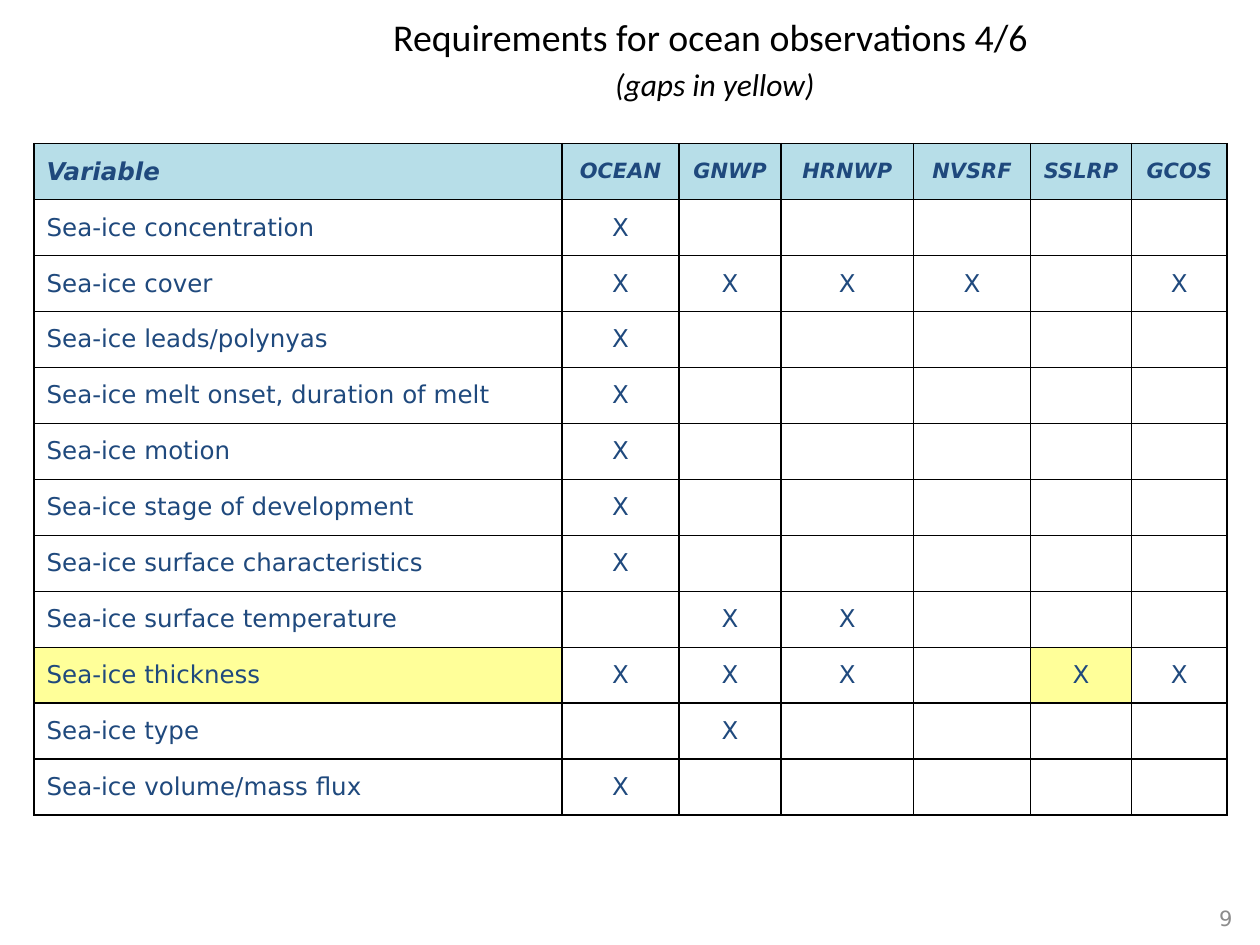
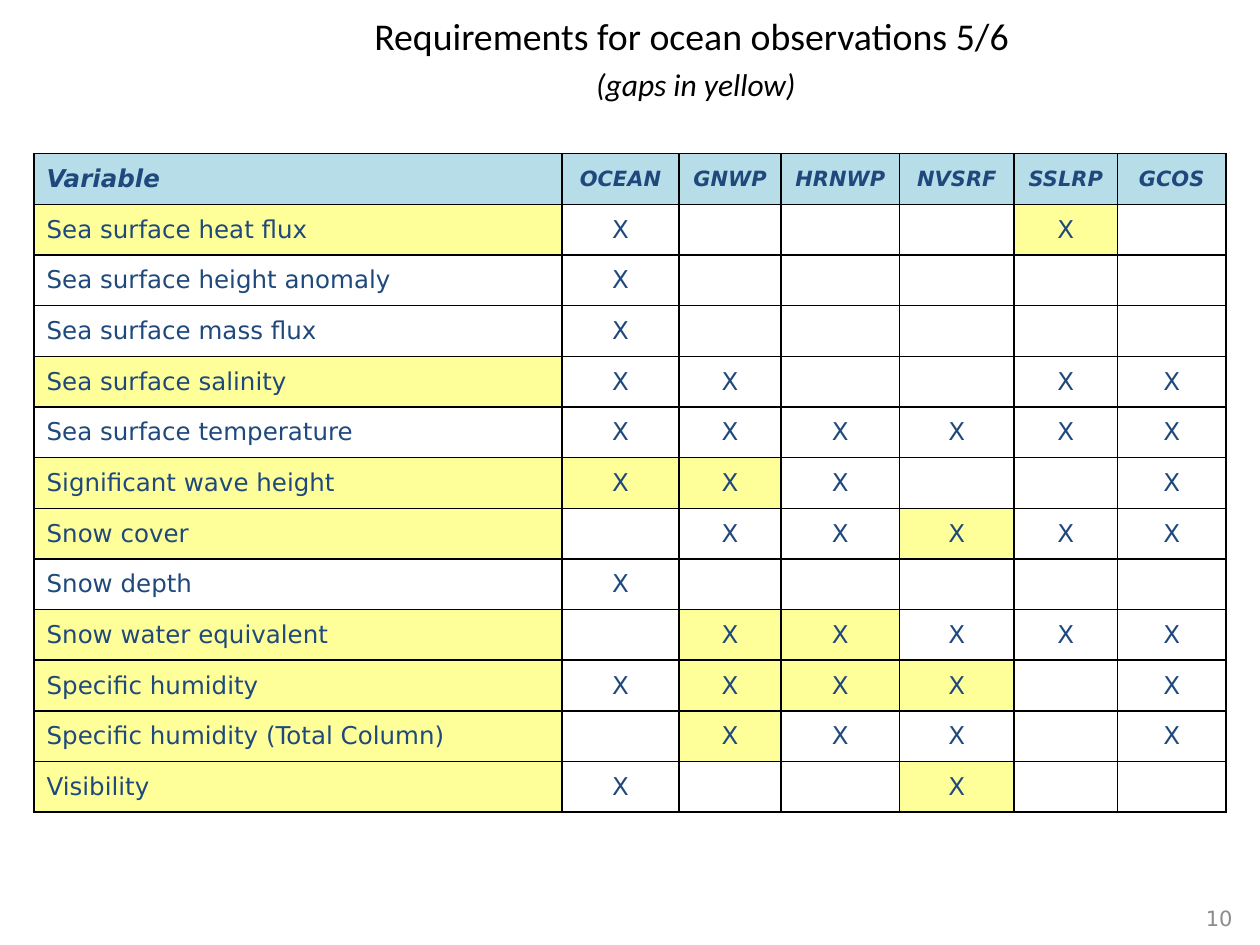
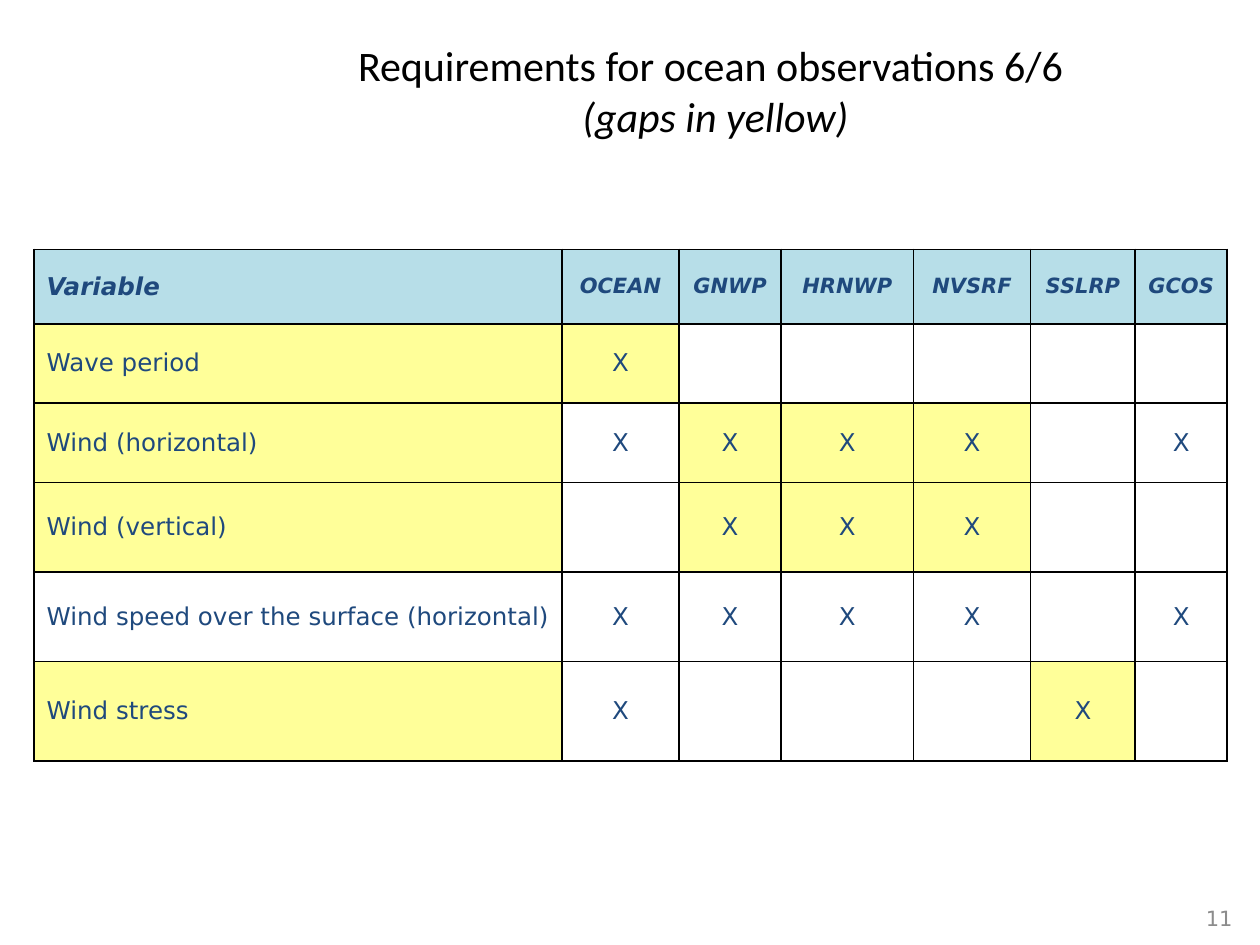
from lxml import etree
from pptx import Presentation
from pptx.dml.color import RGBColor
from pptx.enum.text import MSO_ANCHOR, PP_ALIGN
from pptx.oxml.ns import qn
from pptx.util import Inches, Pt

MIDDLE = MSO_ANCHOR.MIDDLE
LEFT, CENTER, RIGHT = PP_ALIGN.LEFT, PP_ALIGN.CENTER, PP_ALIGN.RIGHT

BLACK = RGBColor(0x00, 0x00, 0x00)
NAVY = RGBColor(0x1F, 0x49, 0x7D)
GRAY = RGBColor(0x8C, 0x8C, 0x8C)
AQUA = RGBColor(0xB7, 0xDE, 0xE8)
YELLOW = RGBColor(0xFF, 0xFF, 0x99)

HEAD_FONT, BODY_FONT = "Calibri", "DejaVu Sans"
HEADS = ["Variable", "OCEAN", "GNWP", "HRNWP", "NVSRF", "SSLRP", "GCOS"]
TABLE_LEFT = 0.27

# Marks: the first sign is for the name, the rest for the six areas.
# "x" is a need, "!" a need with a gap (yellow), "." nothing.
SLIDES = [
    {
        "page": 9, "part": "4/6", "title": (1.53, 0.17, 8.22, 0.59),
        "sizes": (21.6, 18), "top": 1.14,
        "cols": [4.19, 0.93, 0.81, 1.05, 0.93, 0.8, 0.76],
        "heights": [5.33 / 12] * 12,
        "rows": [
            ("Sea-ice concentration", "xx....."),
            ("Sea-ice cover", "xxxxx.x"),
            ("Sea-ice leads/polynyas", "xx....."),
            ("Sea-ice melt onset, duration of melt", "xx....."),
            ("Sea-ice motion", "xx....."),
            ("Sea-ice stage of development", "xx....."),
            ("Sea-ice surface characteristics", "xx....."),
            ("Sea-ice surface temperature", "x.xx..."),
            ("Sea-ice thickness", "!xxx.!x"),
            ("Sea-ice type", "x.x...."),
            ("Sea-ice volume/mass flux", "xx....."),
        ],
    },
    {
        "page": 10, "part": "5/6", "title": (1.38, 0.25, 8.22, 0.43),
        "sizes": (21.6, 18), "top": 1.22,
        "cols": [4.19, 0.93, 0.81, 0.94, 0.91, 0.82, 0.86],
        "heights": [5.23 / 13] * 13,
        "rows": [
            ("Sea surface heat flux", "!x...!."),
            ("Sea surface height anomaly", "xx....."),
            ("Sea surface mass flux", "xx....."),
            ("Sea surface salinity", "!xx..xx"),
            ("Sea surface temperature", "xxxxxxx"),
            ("Significant wave height", "!!!x..x"),
            ("Snow cover", "!.xx!xx"),
            ("Snow depth", "xx....."),
            ("Snow water equivalent", "!.!!xxx"),
            ("Specific humidity", "!x!!!.x"),
            ("Specific humidity (Total Column)", "!.!xx.x"),
            ("Visibility", "!x..!.."),
        ],
    },
    {
        "page": 11, "part": "6/6", "title": (1.53, 0.09, 8.22, 1.25),
        "sizes": (24, 24), "top": 1.98,
        "cols": [4.19, 0.93, 0.81, 1.05, 0.93, 0.83, 0.73],
        "heights": [0.59, 0.63, 0.63, 0.71, 0.71, 0.79],
        "rows": [
            ("Wave period", "!!....."),
            ("Wind (horizontal)", "!x!!!.x"),
            ("Wind (vertical)", "!.!!!.."),
            ("Wind speed over the surface (horizontal)", "xxxxx.x"),
            ("Wind stress", "!x...!."),
        ],
    },
]


def style(run, font, size, color, bold=False, italic=False):
    run.font.name = font
    run.font.size = Pt(size)
    run.font.color.rgb = color
    run.font.bold = bold
    run.font.italic = italic


def add_box(slide, place, text, align):
    """Add a text box and return its only paragraph."""
    frame = slide.shapes.add_textbox(*map(Inches, place)).text_frame
    frame.word_wrap = True
    frame.vertical_anchor = MIDDLE
    para = frame.paragraphs[0]
    para.text = text
    para.alignment = align
    return para


def add_title(slide, data):
    main, small = data["sizes"]
    text = f"Requirements for ocean observations {data['part']}\v "
    para = add_box(slide, data["title"], text, CENTER)
    for run in para.runs:
        style(run, HEAD_FONT, main, BLACK)
    note = para.add_run()
    note.text = "(gaps in yellow)"
    style(note, HEAD_FONT, small, BLACK, italic=True)


def add_borders(cell):
    props = cell._tc.get_or_add_tcPr()
    for side in ("a:lnL", "a:lnR", "a:lnT", "a:lnB"):
        line = etree.SubElement(props, qn(side), w=str(Pt(1)))
        fill = etree.SubElement(line, qn("a:solidFill"))
        etree.SubElement(fill, qn("a:srgbClr"), val=str(BLACK))


def fill_cell(cell, text, color, align, size=14, strong=False):
    add_borders(cell)
    if color is None:
        cell.fill.background()
    else:
        cell.fill.solid()
        cell.fill.fore_color.rgb = color
    cell.vertical_anchor = MIDDLE
    cell.margin_top = cell.margin_bottom = 0
    para = cell.text_frame.paragraphs[0]
    para.text = text
    para.alignment = align
    for run in para.runs:
        style(run, BODY_FONT, size, NAVY, strong, strong)


def add_grid(slide, data):
    cols, heights = data["cols"], data["heights"]
    table = slide.shapes.add_table(
        len(heights), len(cols), Inches(TABLE_LEFT), Inches(data["top"]),
        Inches(sum(cols)), Inches(sum(heights))).table
    table.first_row = table.horz_banding = False
    for col, width in zip(table.columns, cols):
        col.width = Inches(width)
    for row, height in zip(table.rows, heights):
        row.height = Inches(height)
    for c, head in enumerate(HEADS):
        align, size = (CENTER, 12) if c else (LEFT, 14)
        fill_cell(table.cell(0, c), head, AQUA, align, size, True)
    for r, (name, marks) in enumerate(data["rows"], 1):
        for c, mark in enumerate(marks):
            text = name if c == 0 else "" if mark == "." else "X"
            color = YELLOW if mark == "!" else None
            fill_cell(table.cell(r, c), text, color, CENTER if c else LEFT)


def main():
    deck = Presentation()
    deck.slide_width, deck.slide_height = Inches(10), Inches(7.5)
    for data in SLIDES:
        slide = deck.slides.add_slide(deck.slide_layouts[6])
        add_title(slide, data)
        add_grid(slide, data)
        page = add_box(slide, (9.34, 7.12, 0.54, 0.34), str(data["page"]), RIGHT)
        style(page.runs[0], BODY_FONT, 12, GRAY)
    deck.save("out.pptx")


if __name__ == "__main__":
    main()
